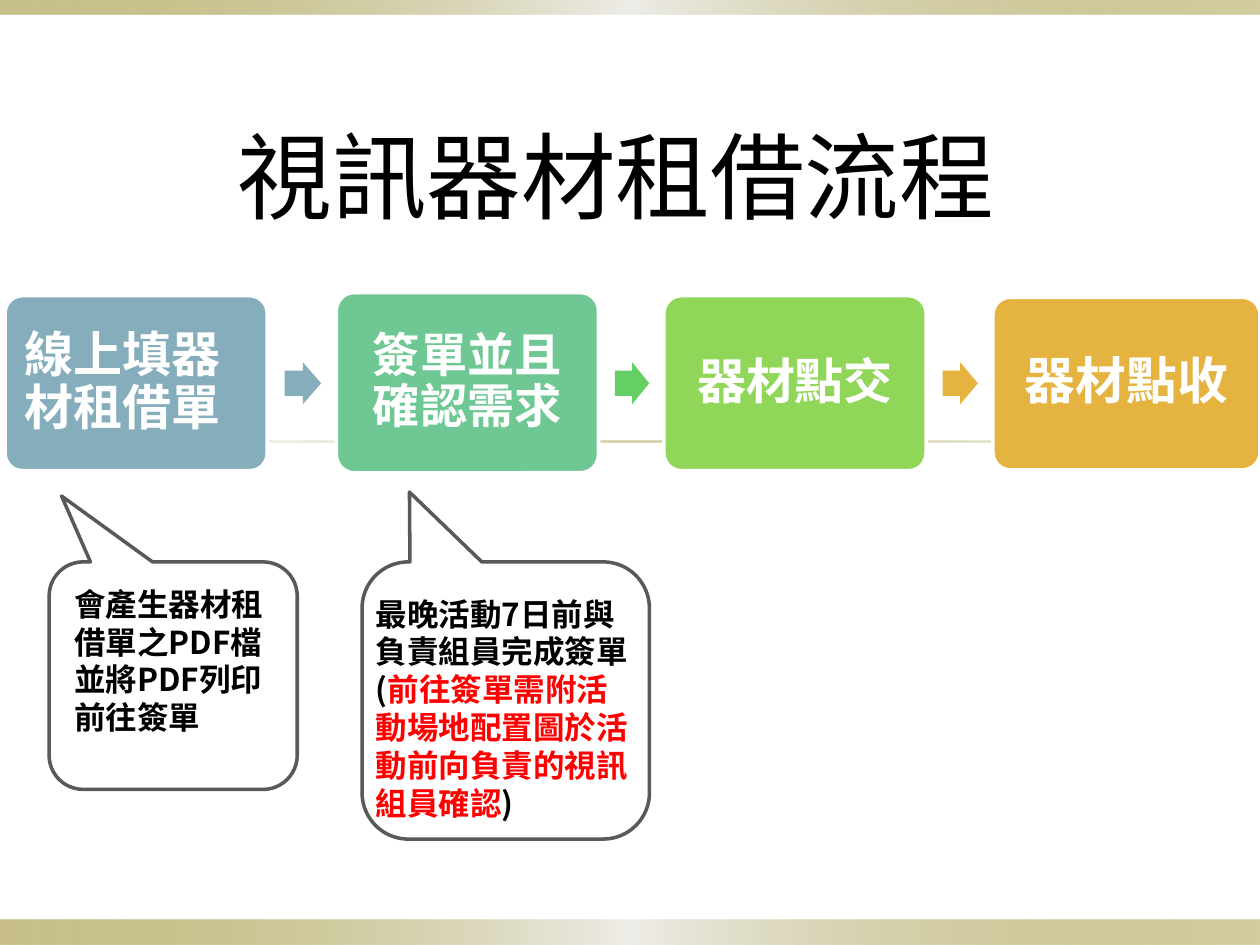
from lxml import etree
from pptx import Presentation
from pptx.dml.color import RGBColor
from pptx.enum.shapes import MSO_SHAPE
from pptx.enum.text import MSO_ANCHOR, MSO_AUTO_SIZE, PP_ALIGN
from pptx.oxml.ns import qn
from pptx.util import Pt

CJK = "Noto Sans CJK SC"
color = RGBColor.from_string


def add_shape(kind, bounds, fill=None, line=None, adjustments=()):
    shape = page.shapes.add_shape(kind, *[Pt(value) for value in bounds])
    shape.shadow.inherit = False
    if fill:
        shape.fill.solid()
        shape.fill.fore_color.rgb = color(fill)
    else:
        shape.fill.background()
    if line:
        shape.line.color.rgb = color(line)
        shape.line.width = Pt(2)
    else:
        shape.line.fill.background()
    for index, value in enumerate(adjustments):
        shape.adjustments[index] = value
    return shape


def format_span(span, size, hex_color, bold=True, latin=CJK):
    span.font.size = Pt(size)
    span.font.bold = bold
    span.font.name = latin
    span.font.color.rgb = color(hex_color)
    etree.SubElement(span.font._element, qn("a:ea")).set("typeface", CJK)


deck = Presentation()
deck.slide_width, deck.slide_height = Pt(720), Pt(540)
page = deck.slides.add_slide(deck.slide_layouts[5])

# Gradient bands: bounds, then (position, colour, opacity) in percent
edge_stops = [(0, "918415", 50), (50, "EEEDE8", 100), (100, "918415", 40)]
rule_stops = [(0, "DCD9CC", 20), (50, "918415", 40), (100, "DCD9CC", 50)]
bands = [
    ((0, 525.6, 720, 14.4), edge_stops),
    ((0, 0, 720, 8.4), edge_stops),
    ((54, 251.7, 612, 1.2), rule_stops),
]
for bounds, stops in bands:
    band = add_shape(MSO_SHAPE.RECTANGLE, bounds)
    band.fill.gradient()
    band.fill.gradient_angle = 0
    stop_list = band.fill._fill._gradFill.find(qn("a:gsLst"))
    for old_stop in list(stop_list):
        stop_list.remove(old_stop)
    for position, hex_color, opacity in stops:
        stop = etree.SubElement(stop_list, qn("a:gs"), pos=str(position * 1000))
        tint = etree.SubElement(stop, qn("a:srgbClr"), val=hex_color)
        etree.SubElement(tint, qn("a:alpha"), val=str(opacity * 1000))

# Title
title = page.shapes.title
title.left, title.top, title.width, title.height = Pt(-36.7), Pt(64), Pt(777), Pt(81.4)
title.text_frame.text = "視訊器材租借流程"
title.text_frame.auto_size = MSO_AUTO_SIZE.NONE
title.text_frame.vertical_anchor = MSO_ANCHOR.TOP
title.text_frame.paragraphs[0].alignment = PP_ALIGN.CENTER
format_span(title.text_frame.paragraphs[0].runs[0], 54, "000000", bold=False)

# Process steps
steps = [
    ("線上填器材租借單", (2.9, 169, 149.8, 100), "85ADBC", 28, "Cabin", PP_ALIGN.LEFT),
    ("簽單並且確認需求", (192.2, 167.2, 149.8, 103), "6FC894", 27, "Cabin", PP_ALIGN.CENTER),
    ("器材點交", (379.4, 169, 149.8, 100), "90D658", 28, CJK, PP_ALIGN.CENTER),
    ("器材點收", (567.4, 169.9, 152.6, 98.6), "E5B440", 29, CJK, PP_ALIGN.CENTER),
]
for text, bounds, fill, size, latin, alignment in steps:
    step = add_shape(MSO_SHAPE.ROUNDED_RECTANGLE, bounds, fill, "FFFFFF", [0.1])
    frame = step.text_frame
    frame.text = text
    frame.word_wrap = True
    frame.vertical_anchor = MSO_ANCHOR.MIDDLE
    frame.margin_left = frame.margin_right = Pt(8.4)
    frame.margin_top = frame.margin_bottom = Pt(8.4)
    para = frame.paragraphs[0]
    para.alignment = alignment
    para.line_spacing = 0.9
    format_span(para.runs[0], size, "FFFFFF", latin=latin)

# Arrows between the steps
for left, width, fill in [(162.6, 20.9, "85ADBC"), (351.4, 19.6, "65CF64"), (538.6, 20.2, "E5B440")]:
    add_shape(MSO_SHAPE.RIGHT_ARROW, (left, 207, width, 24), fill, adjustments=[0.6, 0.5])

# Callouts: bounds, pointer, margins (left, top, right), paragraphs of coloured spans
callouts = [
    ((28.1, 321.1, 141.8, 130), (-0.45, -0.79, 0.15), (8.6, 7.4, 8.6), [
        [("會產生器材租借單之PDF檔", "000000")],
        [("並將PDF列印前往簽單", "000000")],
    ]),
    ((206.9, 321.1, 164.2, 158.4), (-0.335, -0.752, 0.167), (0, 11, 2), [
        [("最晚活動7日前與負責組員完成簽單", "000000")],
        [("(", "000000"),
         ("前往簽單需附活動場地配置圖於活動前向負責的視訊組員確認", "FF0000"),
         (")", "000000")],
    ]),
]
for bounds, pointer, margins, paragraphs in callouts:
    callout = add_shape(MSO_SHAPE.ROUNDED_RECTANGULAR_CALLOUT, bounds, line="595959", adjustments=pointer)
    frame = callout.text_frame
    frame.word_wrap = True
    frame.vertical_anchor = MSO_ANCHOR.TOP
    frame.margin_left, frame.margin_top, frame.margin_right = [Pt(value) for value in margins]
    frame.margin_bottom = 0
    for index, spans in enumerate(paragraphs):
        para = frame.add_paragraph() if index else frame.paragraphs[0]
        para.alignment = PP_ALIGN.LEFT
        for text, hex_color in spans:
            span = para.add_run()
            span.text = text
            format_span(span, 18, hex_color)

deck.save("out.pptx")
